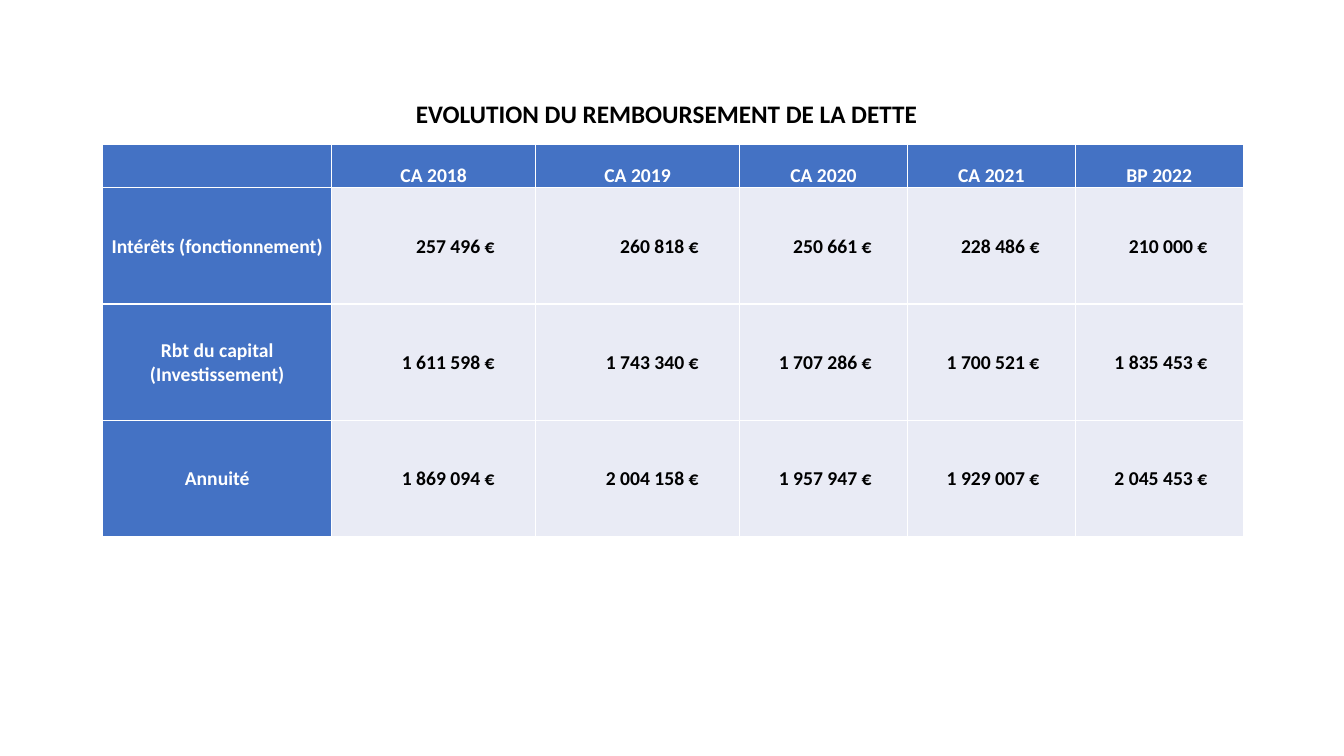
from dataclasses import dataclass

from lxml.etree import SubElement
from pptx import Presentation
from pptx.dml.color import RGBColor
from pptx.enum.text import MSO_ANCHOR, MSO_AUTO_SIZE, PP_ALIGN
from pptx.oxml.ns import qn
from pptx.util import Cm, Pt

TITLE = "EVOLUTION DU REMBOURSEMENT DE LA DETTE"
YEARS = ["", "CA 2018", "CA 2019", "CA 2020", "CA 2021", "BP 2022"]
DEBT = [
    ("Intérêts (fonctionnement)",
     "257 496 €", "260 818 €", "250 661 €", "228 486 €", "210 000 €"),
    ("Rbt du capital (Investissement)",
     "1 611 598 €", "1 743 340 €", "1 707 286 €", "1 700 521 €", "1 835 453 €"),
    ("Annuité",
     "1 869 094 €", "2 004 158 €", "1 957 947 €", "1 929 007 €", "2 045 453 €"),
]
WIDTHS = [5.77, 5.14, 5.14, 4.23, 4.23, 4.23]
PADS = [0.03, 1.03, 1.03, 0.9, 0.9, 0.9]  # right margin of the amounts
HEIGHTS = [1.1] + [2.93] * len(DEBT)
TABLE_LEFT, TABLE_TOP = 2.59, 3.63


@dataclass(frozen=True)
class Theme:
    font: str = "Calibri"
    blue: str = "4472C4"
    pale: str = "E9EBF5"
    white: str = "FFFFFF"
    black: str = "000000"
    title: int = 18
    body: int = 14
    rule: int = 1


THEME = Theme()


def write(frame, text, *, size=THEME.body, color=THEME.black,
          align=PP_ALIGN.CENTER):
    para = frame.paragraphs[0]
    para.alignment = align
    para.text = text
    font = para.font
    if para.runs:
        font = para.runs[0].font
    font.name, font.size, font.bold = THEME.font, Pt(size), True
    font.color.rgb = RGBColor.from_string(color)


def frame_cell(cell):
    """Draw a white line on each side of a cell; call before filling it."""
    props = cell._tc.get_or_add_tcPr()
    for side in ("a:lnL", "a:lnR", "a:lnT", "a:lnB"):
        line = SubElement(props, qn(side), w=str(Pt(THEME.rule)))
        fill = SubElement(line, qn("a:solidFill"))
        SubElement(fill, qn("a:srgbClr"), val=THEME.white)


def add_title(slide):
    title = slide.shapes.title
    title.left, title.top = Cm(3.86), Cm(1.57)
    title.width, title.height = Cm(25.88), Cm(1.8)
    frame = title.text_frame
    frame.word_wrap = True
    frame.auto_size = MSO_AUTO_SIZE.NONE
    frame.vertical_anchor = MSO_ANCHOR.BOTTOM
    write(frame, TITLE, size=THEME.title)


def add_debt(slide):
    rows = [YEARS, *DEBT]
    table = slide.shapes.add_table(
        len(rows), len(YEARS), Cm(TABLE_LEFT), Cm(TABLE_TOP),
        Cm(sum(WIDTHS)), Cm(sum(HEIGHTS))).table
    table.first_row = table.horz_banding = False
    for column, width in zip(table.columns, WIDTHS):
        column.width = Cm(width)
    for row, height in zip(table.rows, HEIGHTS):
        row.height = Cm(height)

    for r, row in enumerate(rows):
        for c, text in enumerate(row):
            cell = table.cell(r, c)
            head = r == 0 or c == 0
            frame_cell(cell)
            cell.fill.solid()
            cell.fill.fore_color.rgb = RGBColor.from_string(
                THEME.blue if head else THEME.pale)
            cell.margin_left = cell.margin_top = Cm(0.03)
            cell.margin_right = Cm(0.03 if head else PADS[c])
            cell.margin_bottom = 0
            cell.vertical_anchor = (
                MSO_ANCHOR.BOTTOM if r == 0 else MSO_ANCHOR.MIDDLE)
            write(cell.text_frame, text,
                  color=THEME.white if head else THEME.black,
                  align=PP_ALIGN.CENTER if head else PP_ALIGN.RIGHT)


def main():
    deck = Presentation()
    deck.slide_width, deck.slide_height = Cm(33.87), Cm(19.05)
    slide = deck.slides.add_slide(deck.slide_layouts.get_by_name("Title Only"))
    add_title(slide)
    add_debt(slide)
    deck.save("out.pptx")


if __name__ == "__main__":
    main()
